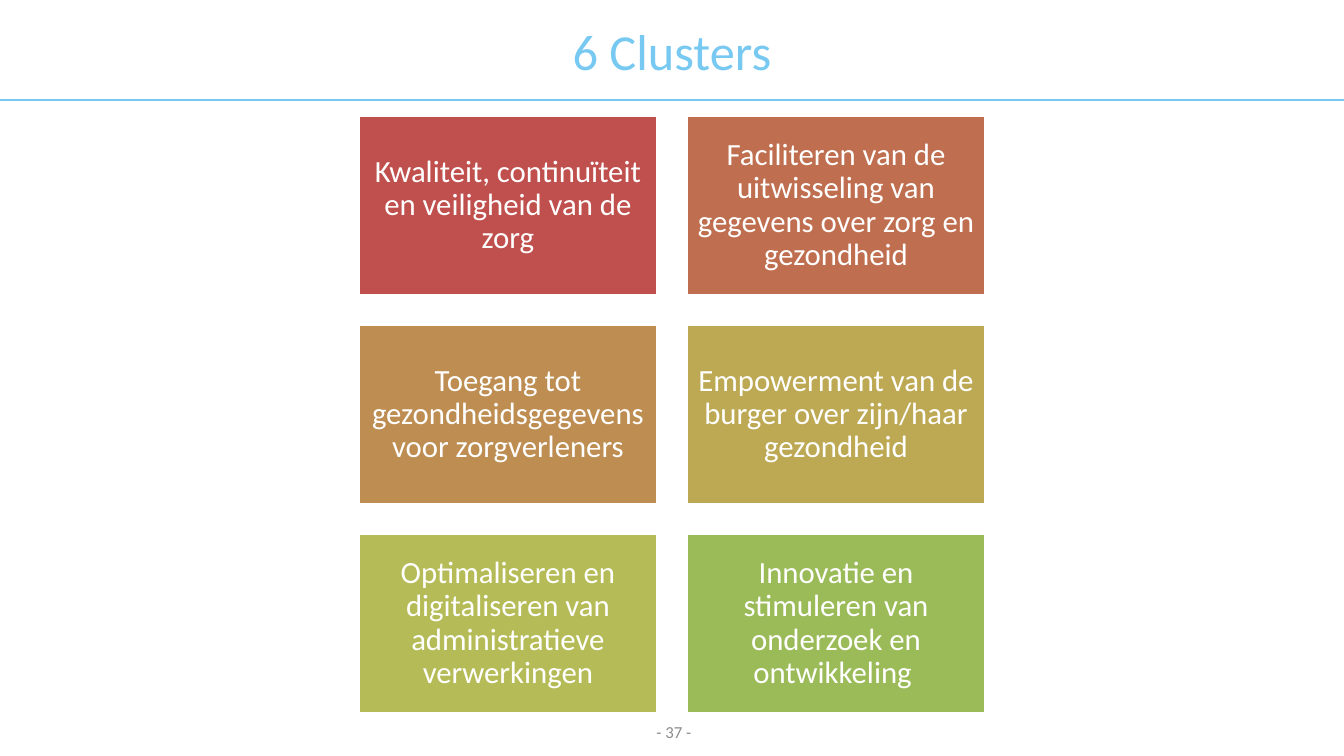
from dataclasses import dataclass

from lxml import etree
from pptx import Presentation
from pptx.dml.color import RGBColor as RGB
from pptx.enum.shapes import MSO_CONNECTOR as CONN, MSO_SHAPE as SHAPE
from pptx.enum.text import MSO_ANCHOR as ANCHOR, PP_ALIGN as ALIGN
from pptx.oxml.ns import qn
from pptx.util import Pt


@dataclass(frozen=True)
class Theme:
    font: str = "Calibri"
    accent: str = "77C9F2"
    white: str = "FFFFFF"
    grey: str = "8C8C8C"
    title_size: int = 36
    card_size: int = 22
    footer_size: int = 12


@dataclass(frozen=True)
class Box:
    x: float
    y: float
    w: float
    h: float

    def lengths(self):
        return Pt(self.x), Pt(self.y), Pt(self.w), Pt(self.h)


THEME = Theme()
WIDTH, HEIGHT = 960, 540
CLUSTERS = [
    ("Kwaliteit, continuïteit en veiligheid van de zorg", "C0504D"),
    ("Faciliteren van de uitwisseling van gegevens over zorg en gezondheid", "BF6F4F"),
    ("Toegang tot gezondheidsgegevens voor zorgverleners", "BE8D52"),
    ("Empowerment van de burger over zijn/haar gezondheid", "BDA954"),
    ("Optimaliseren en digitaliseren van administratieve verwerkingen", "B5BC57"),
    ("Innovatie en stimuleren van onderzoek en ontwikkeling ", "9BBB59"),
]


def write(sp, text, size, color):
    tf = sp.text_frame
    tf.word_wrap = True
    tf.vertical_anchor = ANCHOR.MIDDLE
    p = tf.paragraphs[0]
    p.alignment = ALIGN.CENTER
    r = p.add_run()
    r.text = text
    r.font.name = THEME.font
    r.font.size = Pt(size)
    r.font.color.rgb = RGB.from_string(color)
    return tf


def add_header(s, box, text):
    bottom = Pt(box.y + box.h)
    rule = s.shapes.add_connector(CONN.STRAIGHT, Pt(box.x), bottom, Pt(box.x + box.w), bottom)
    rule.line.color.rgb = RGB.from_string(THEME.accent)
    rule.line.width = Pt(1.5)
    etree.SubElement(rule.element.spPr, qn("a:effectLst"))
    title = s.shapes.add_textbox(*box.lengths())
    write(title, text, THEME.title_size, THEME.accent)


def add_card(s, box, text, color):
    sp = s.shapes.add_shape(SHAPE.RECTANGLE, *box.lengths())
    sp.shadow.inherit = False
    sp.fill.solid()
    sp.fill.fore_color.rgb = RGB.from_string(color)
    sp.line.color.rgb = RGB.from_string(THEME.white)
    sp.line.width = Pt(2)
    tf = write(sp, text, THEME.card_size, THEME.white)
    tf.margin_left = tf.margin_right = tf.margin_top = tf.margin_bottom = Pt(6.6)
    tf.paragraphs[0].line_spacing = 0.9


def add_clusters(s, box, clusters, cols=2, gap=21.3):
    rows = -(-len(clusters) // cols)
    w = (box.w - gap * (cols - 1)) / cols
    h = (box.h - gap * (rows - 1)) / rows
    for i, (text, color) in enumerate(clusters):
        row, col = divmod(i, cols)
        card = Box(box.x + col * (w + gap), box.y + row * (h + gap), w, h)
        add_card(s, card, text, color)


def add_footer(s, box, text):
    sp = s.shapes.add_textbox(*box.lengths())
    write(sp, text, THEME.footer_size, THEME.grey)


def main():
    prs = Presentation()
    prs.slide_width, prs.slide_height = Pt(WIDTH), Pt(HEIGHT)
    s = prs.slides.add_slide(prs.slide_layouts[6])
    add_header(s, Box(0, 0, WIDTH, 71.4), "6 Clusters")
    add_clusters(s, Box(256.3, 82.8, 447.4, 426.5), CLUSTERS)
    add_footer(s, Box(369.4, 508.5, 224, 28.8), "- 37 -")
    prs.save("out.pptx")


if __name__ == "__main__":
    main()
